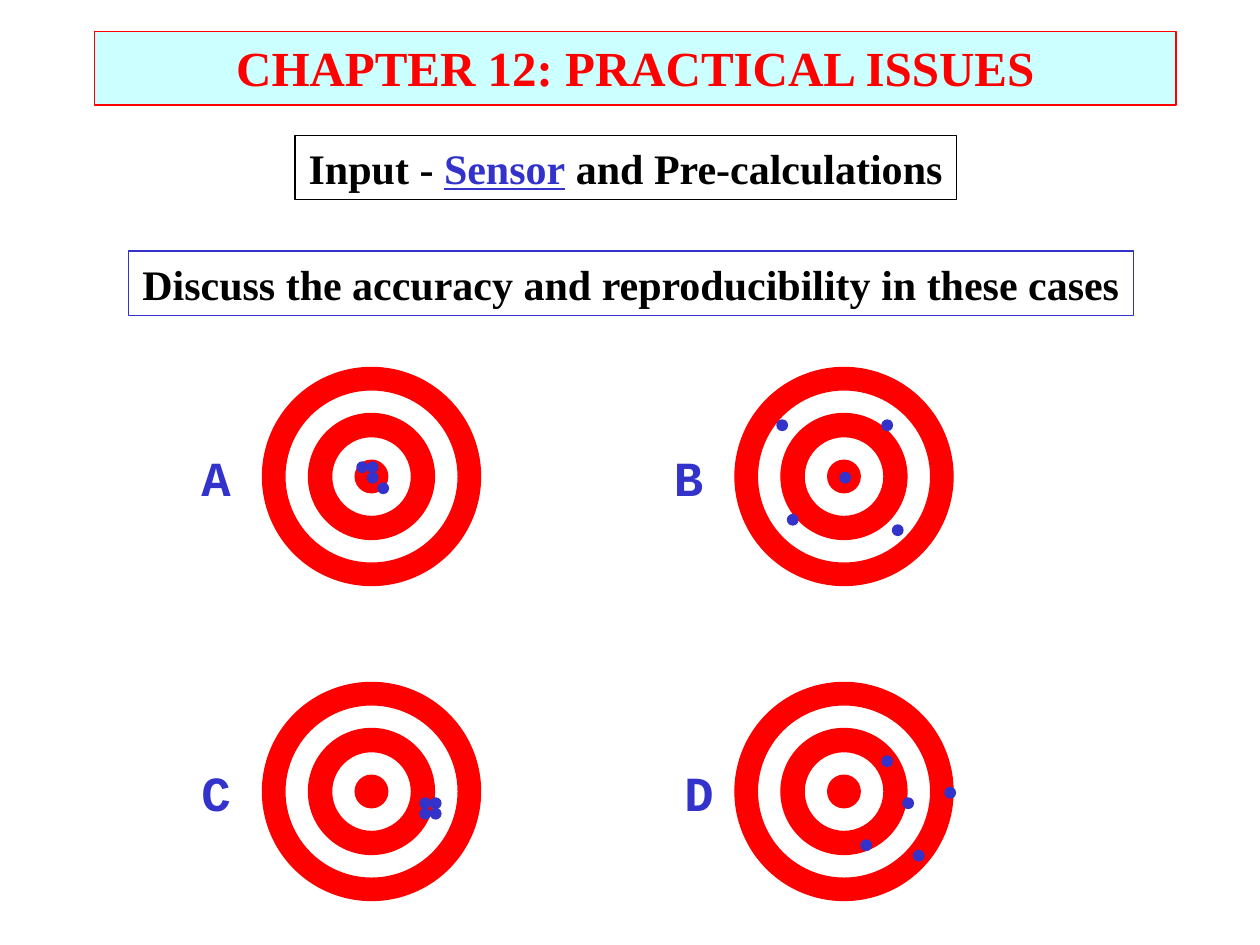
from pptx import Presentation
from pptx.dml.color import RGBColor
from pptx.enum import shapes, text
from pptx.util import Pt

COLORS = {"red": "FF0000", "blue": "3333CC", "white": "FFFFFF",
          "black": "000000", "pale": "CCFFFF"}
SERIF, MONO = "Times New Roman", "Courier New"
RINGS = [(124.6, "red"), (99, "white"), (72, "red"), (45.6, "white")]
BULLSEYE = 19.4
DOT = 6
COLUMNS, ROWS = (150, 420), (210, 390)

# letter, column, row, letter offset, hits measured from the target's corner
TARGETS = [
    ("A", 0, 0, -42, [(66, 66), (60, 60), (54, 54), (60, 54)]),
    ("B", 1, 0, -42, [(24, 30), (90, 90), (30, 84), (84, 30), (60, 60)]),
    ("C", 0, 1, -42, [(90, 66), (90, 72), (96, 66), (96, 72)]),
    ("D", 1, 1, -36, [(84, 42), (72, 90), (120, 60), (102, 96), (96, 66)]),
]


def color(name):
    return RGBColor.from_string(COLORS[name])


def paint(shape, fill, line):
    """Set fill and outline by colour name; None means no paint."""
    shape.shadow.inherit = False
    if fill:
        shape.fill.solid()
        shape.fill.fore_color.rgb = color(fill)
    else:
        shape.fill.background()
    if line:
        shape.line.color.rgb = color(line)
        shape.line.width = Pt(0.75)
    else:
        shape.line.fill.background()


def write(shape, spans, size, font, wrap=False):
    """Fill a shape with one centred paragraph of (text, colour, underline) spans."""
    frame = shape.text_frame
    frame.word_wrap = wrap
    frame.auto_size = text.MSO_AUTO_SIZE.SHAPE_TO_FIT_TEXT
    frame.vertical_anchor = (text.MSO_ANCHOR.TOP if wrap
                             else text.MSO_ANCHOR.MIDDLE)
    para = frame.paragraphs[0]
    para.alignment = text.PP_ALIGN.CENTER
    para.space_before = Pt(size / 10)
    for words, ink, underline in spans:
        span = para.add_run()
        span.text = words
        span.font.name = font
        span.font.size = Pt(size)
        span.font.bold = True
        span.font.underline = underline
        span.font.color.rgb = color(ink)


def add_box(page, place, spans, size, line, fill=None, wrap=False):
    box = page.shapes.add_shape(shapes.MSO_SHAPE.RECTANGLE, *map(Pt, place))
    paint(box, fill, line)
    write(box, spans, size, SERIF, wrap)


def add_circle(parent, left, top, size, fill, line):
    circle = parent.shapes.add_shape(
        shapes.MSO_SHAPE.OVAL, Pt(left), Pt(top), Pt(size), Pt(size))
    paint(circle, fill, line)


def add_target(page, left, top, hits):
    group = page.shapes.add_group_shape()
    outer = RINGS[0][0]
    for size, fill in RINGS:
        inset = (outer - size) / 2
        add_circle(group, left + inset, top + inset, size, fill, "red")
    inset = (outer - BULLSEYE) / 2
    add_circle(group, left + inset, top + inset, BULLSEYE, "red", None)
    for x, y in hits:
        add_circle(page, left + x, top + y, DOT, "blue", "blue")


def add_letter(page, left, top, letter):
    box = page.shapes.add_textbox(Pt(left), Pt(top), Pt(31), Pt(41))
    write(box, [(letter, "blue", False)], 28, MONO)


def main():
    deck = Presentation()
    deck.slide_width, deck.slide_height = Pt(720), Pt(540)
    page = deck.slides.add_slide(deck.slide_layouts[6])

    add_box(page, (54, 18, 618, 42),
            [("CHAPTER 12: PRACTICAL ISSUES", "red", False)],
            28, "red", fill="pale", wrap=True)
    add_box(page, (168.5, 77.5, 378, 36.7),
            [("Input - ", "black", False), ("Sensor", "blue", True),
             (" and Pre-calculations", "black", False)], 24, "black")
    for letter, column, row, offset, hits in TARGETS:
        left, top = COLUMNS[column], ROWS[row]
        add_target(page, left, top, hits)
        add_letter(page, left + offset, top + 42, letter)
    add_box(page, (73.3, 143.5, 574.5, 36.7),
            [("Discuss the accuracy and reproducibility in these cases",
              "black", False)], 24, "blue")

    deck.save("out.pptx")


if __name__ == "__main__":
    main()
